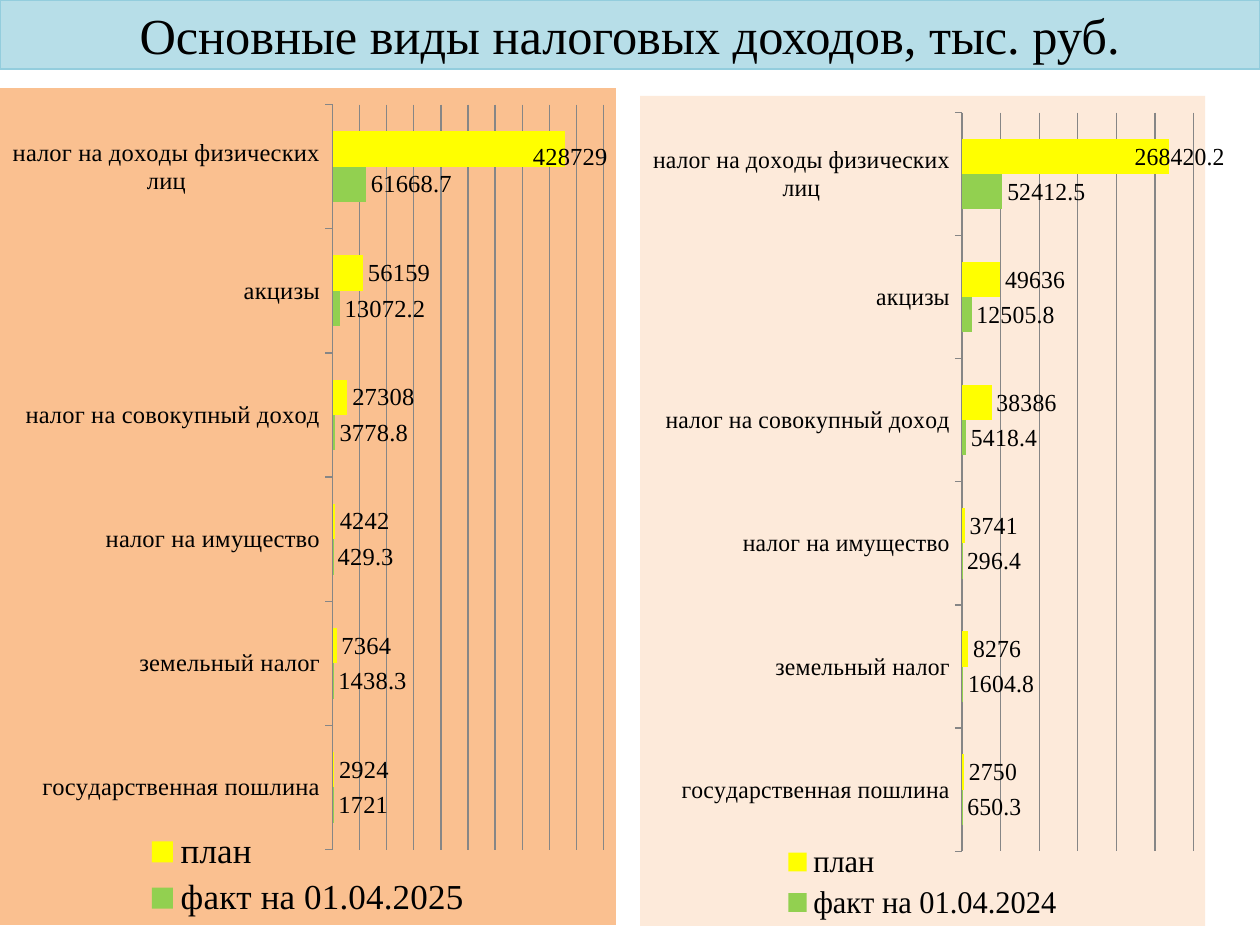
from dataclasses import dataclass

from lxml import etree
from pptx import Presentation
from pptx.chart.data import CategoryChartData
from pptx.dml.color import RGBColor
from pptx.enum.chart import XL_CHART_TYPE, XL_LABEL_POSITION, XL_LEGEND_POSITION, XL_TICK_MARK
from pptx.enum.shapes import MSO_SHAPE
from pptx.enum.text import MSO_ANCHOR, PP_ALIGN
from pptx.oxml import parse_xml
from pptx.oxml.ns import nsdecls, qn
from pptx.util import Pt

BAR_CLUSTERED = XL_CHART_TYPE.BAR_CLUSTERED
OUTSIDE_END = XL_LABEL_POSITION.OUTSIDE_END
LEGEND_BOTTOM = XL_LEGEND_POSITION.BOTTOM
TICK_OUTSIDE = XL_TICK_MARK.OUTSIDE
RECTANGLE = MSO_SHAPE.RECTANGLE
MIDDLE = MSO_ANCHOR.MIDDLE
CENTER = PP_ALIGN.CENTER

PX_PER_INCH = 126
FONT = "Times New Roman"
BLACK = "000000"
GRAY = "868686"
CATEGORIES = (
    "государственная пошлина",
    "земельный налог",
    "налог на имущество",
    "налог на совокупный доход",
    "акцизы",
    "налог на доходы физических лиц",
)
SERIES_COLORS = ("92D050", "FFFF00")


@dataclass
class Box:
    left: int
    top: int
    width: int
    height: int


@dataclass
class TaxChart:
    box: Box
    fill: str
    plot_area: tuple[float, float, float, float]
    label_shift: tuple[float, float]
    legend_size: int
    axis_maximum: int
    fact_name: str
    fact: tuple[float, ...]
    plan: tuple[float, ...]


TAX_CHARTS = (
    TaxChart(
        Box(0, 88, 616, 837), "FAC090", (0.54, 0.02, 0.44, 0.89), (-0.06, 0.01),
        20, 500000, "факт на 01.04.2025",
        (1721, 1438.3, 429.3, 3778.8, 13072.2, 61668.7),
        (2924, 7364, 4242, 27308, 56159, 428729),
    ),
    TaxChart(
        Box(640, 96, 585, 830), "FDEADA", (0.57, 0.02, 0.41, 0.89), (-0.07, 0),
        18, 300000, "факт на 01.04.2024",
        (650.3, 1604.8, 296.4, 5418.4, 12505.8, 52412.5),
        (2750, 8276, 3741, 38386, 49636, 268420.2),
    ),
)


def px(length: int) -> int:
    return round(length * 914400 / PX_PER_INCH)


def place(box: Box) -> tuple[int, ...]:
    return tuple(px(length) for length in (box.left, box.top, box.width, box.height))


def color(value: str) -> RGBColor:
    return RGBColor.from_string(value)


def style_font(font, size: float, name: str = FONT) -> None:
    font.name = name
    font.size = Pt(size)
    font.color.rgb = color(BLACK)


def manual_layout(**values):
    layout = parse_xml(f"<c:layout {nsdecls('c')}><c:manualLayout/></c:layout>")
    for tag, value in values.items():
        etree.SubElement(layout[0], qn(f"c:{tag}")).set("val", str(value))
    return layout


def draw_title(slide, box: Box, text: str) -> None:
    shape = slide.shapes.add_shape(RECTANGLE, *place(box))
    shape.shadow.inherit = False
    shape.fill.solid()
    shape.fill.fore_color.rgb = color("B7DEE8")
    shape.line.color.rgb = color("93CDDD")
    shape.line.width = Pt(0.75)
    frame = shape.text_frame
    frame.word_wrap = True
    frame.vertical_anchor = MIDDLE
    frame.margin_top = frame.margin_bottom = 0
    paragraph = frame.paragraphs[0]
    paragraph.alignment = CENTER
    run = paragraph.add_run()
    run.text = text
    style_font(run.font, 28.8)


def style_axes(chart, maximum: int) -> None:
    category_axis = chart.category_axis
    category_axis.major_tick_mark = TICK_OUTSIDE
    category_axis.format.line.color.rgb = color(GRAY)
    style_font(category_axis.tick_labels.font, 14)
    value_axis = chart.value_axis
    value_axis.minimum_scale = 0
    value_axis.maximum_scale = maximum
    value_axis.major_unit = 50000
    value_axis.has_major_gridlines = True
    value_axis.major_gridlines.format.line.color.rgb = color(GRAY)
    value_axis.visible = False


def style_series(series, fill: str) -> None:
    series.format.fill.solid()
    series.format.fill.fore_color.rgb = color(fill)
    series.invert_if_negative = False
    labels = series.data_labels
    labels.show_value = True
    labels.position = OUTSIDE_END
    style_font(labels.font, 14)


def shift_last_label(series, shift: tuple[float, float]) -> None:
    label = series.points[len(CATEGORIES) - 1].data_label
    label.position = OUTSIDE_END
    style_font(label.font, 14)
    element = series.data_labels._element.find(qn("c:dLbl"))
    element.insert(1, manual_layout(x=shift[0], y=shift[1]))


def draw_chart(slide, tax_chart: TaxChart) -> None:
    data = CategoryChartData()
    data.categories = CATEGORIES
    data.add_series(tax_chart.fact_name, tax_chart.fact)
    data.add_series("план", tax_chart.plan)
    chart = slide.shapes.add_chart(BAR_CLUSTERED, *place(tax_chart.box), data).chart
    chart.has_title = False
    style_font(chart.font, 18, "Calibri")
    chart.has_legend = True
    chart.legend.position = LEGEND_BOTTOM
    chart.legend.include_in_layout = False
    style_font(chart.legend.font, tax_chart.legend_size)
    style_axes(chart, tax_chart.axis_maximum)

    plot = chart.plots[0]
    plot.gap_width = 150
    plot.vary_by_categories = False
    for series, fill in zip(plot.series, SERIES_COLORS):
        style_series(series, fill)
    shift_last_label(plot.series[1], tax_chart.label_shift)

    chart_space = chart._chartSpace
    plot_area = chart_space.chart.plotArea
    for layout in plot_area.findall(qn("c:layout")):
        plot_area.remove(layout)
    left, top, width, height = tax_chart.plot_area
    plot_area.insert(0, manual_layout(
        layoutTarget="inner", xMode="edge", yMode="edge", x=left, y=top, w=width, h=height,
    ))
    chart_space.chart.addnext(parse_xml(
        f"<c:spPr {nsdecls('c', 'a')}><a:solidFill><a:srgbClr val='{tax_chart.fill}'/>"
        "</a:solidFill><a:ln><a:noFill/></a:ln></c:spPr>"
    ))


def main() -> None:
    presentation = Presentation()
    presentation.slide_width = px(1260)
    presentation.slide_height = px(945)
    slide = presentation.slides.add_slide(presentation.slide_layouts[6])
    draw_title(slide, Box(0, 0, 1260, 69), "Основные виды налоговых доходов, тыс. руб.")
    for tax_chart in TAX_CHARTS:
        draw_chart(slide, tax_chart)
    presentation.save("out.pptx")


if __name__ == "__main__":
    main()
